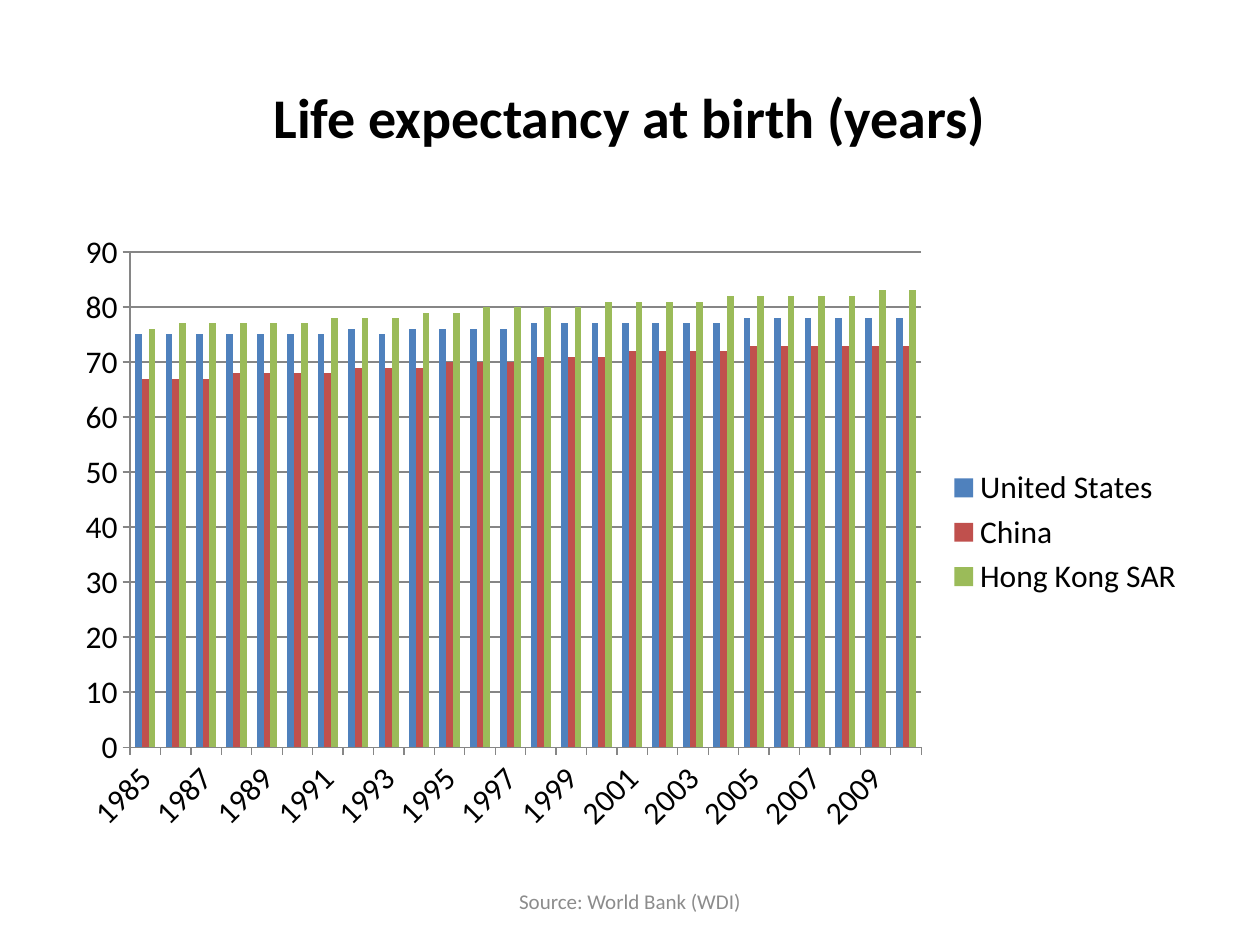
from pptx import Presentation
from pptx.chart.data import CategoryChartData
from pptx.dml.color import RGBColor
from pptx.enum.chart import XL_CHART_TYPE, XL_LEGEND_POSITION, XL_TICK_MARK
from pptx.enum.text import MSO_ANCHOR, PP_ALIGN
from pptx.util import Inches, Pt

CLUSTERED = XL_CHART_TYPE.COLUMN_CLUSTERED
LEGEND_RIGHT = XL_LEGEND_POSITION.RIGHT
TICK_OUTSIDE = XL_TICK_MARK.OUTSIDE
MIDDLE = MSO_ANCHOR.MIDDLE
CENTER = PP_ALIGN.CENTER

FONT = "Calibri"
BLACK = RGBColor(0x00, 0x00, 0x00)
GRAY = RGBColor(0x8C, 0x8C, 0x8C)
AXIS_GRAY = RGBColor(0x86, 0x86, 0x86)
BLUE = RGBColor(0x4F, 0x81, 0xBD)
RED = RGBColor(0xC0, 0x50, 0x4D)
GREEN = RGBColor(0x9B, 0xBB, 0x59)

YEARS = range(1985, 2011)
LIFE_EXPECTANCY = [
    ("United States", BLUE,
     [75, 75, 75, 75, 75, 75, 75, 76, 75, 76, 76, 76, 76,
      77, 77, 77, 77, 77, 77, 77, 78, 78, 78, 78, 78, 78]),
    ("China", RED,
     [67, 67, 67, 68, 68, 68, 68, 69, 69, 69, 70, 70, 70,
      71, 71, 71, 72, 72, 72, 72, 73, 73, 73, 73, 73, 73]),
    ("Hong Kong SAR", GREEN,
     [76, 77, 77, 77, 77, 77, 78, 78, 78, 79, 79, 80, 80,
      80, 80, 81, 81, 81, 81, 82, 82, 82, 82, 82, 83, 83]),
]

presentation = Presentation()
presentation.slide_width = Inches(10)
presentation.slide_height = Inches(7.5)
slide_width, slide_height = presentation.slide_width, presentation.slide_height
slide = presentation.slides.add_slide(presentation.slide_layouts[6])

margin = int(slide_width * 0.05)
content_width = slide_width - 2 * margin


def add_centered_text(text, top, width, height, size, color, bold=False):
    """Add one line of text, centred across the slide."""
    left = (slide_width - width) // 2
    frame = slide.shapes.add_textbox(left, top, width, height).text_frame
    frame.word_wrap = True
    frame.vertical_anchor = MIDDLE
    paragraph = frame.paragraphs[0]
    paragraph.alignment = CENTER
    run = paragraph.add_run()
    run.text = text
    run.font.name = FONT
    run.font.size = Pt(size)
    run.font.bold = bold
    run.font.color.rgb = color


add_centered_text("Life expectancy at birth (years)", int(slide_height * 0.04),
                  content_width, Inches(1.25), 32, BLACK, bold=True)

chart_data = CategoryChartData()
chart_data.categories = [str(year) for year in YEARS]
for name, color, values in LIFE_EXPECTANCY:
    chart_data.add_series(name, values)

chart = slide.shapes.add_chart(
    CLUSTERED, margin, Inches(1.75), content_width, int(slide_height * 0.66), chart_data
).chart
chart.has_title = False
chart.font.name = FONT
chart.font.size = Pt(18)
chart.font.color.rgb = BLACK
chart.has_legend = True
chart.legend.position = LEGEND_RIGHT
chart.legend.include_in_layout = False

plot = chart.plots[0]
plot.gap_width = 150
plot.vary_by_categories = False
for series, (name, color, values) in zip(plot.series, LIFE_EXPECTANCY):
    series.format.fill.solid()
    series.format.fill.fore_color.rgb = color

value_axis = chart.value_axis
value_axis.has_major_gridlines = True
for axis in (chart.category_axis, value_axis):
    axis.major_tick_mark = TICK_OUTSIDE
for lined in (chart.category_axis, value_axis, value_axis.major_gridlines):
    lined.format.line.color.rgb = AXIS_GRAY
    lined.format.line.width = Pt(0.75)

add_centered_text("Source: World Bank (WDI)", Inches(6.95),
                  Inches(3.17), Inches(0.4), 12, GRAY)

presentation.save("out.pptx")
